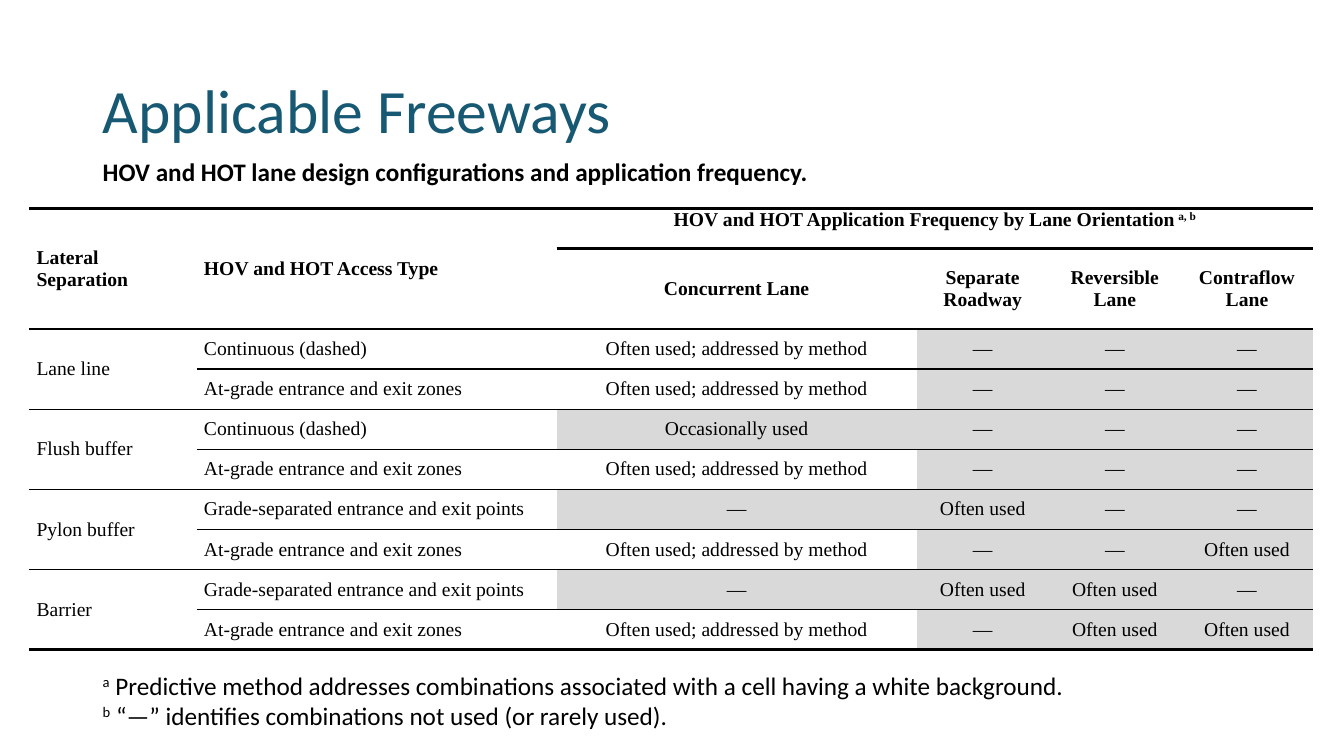
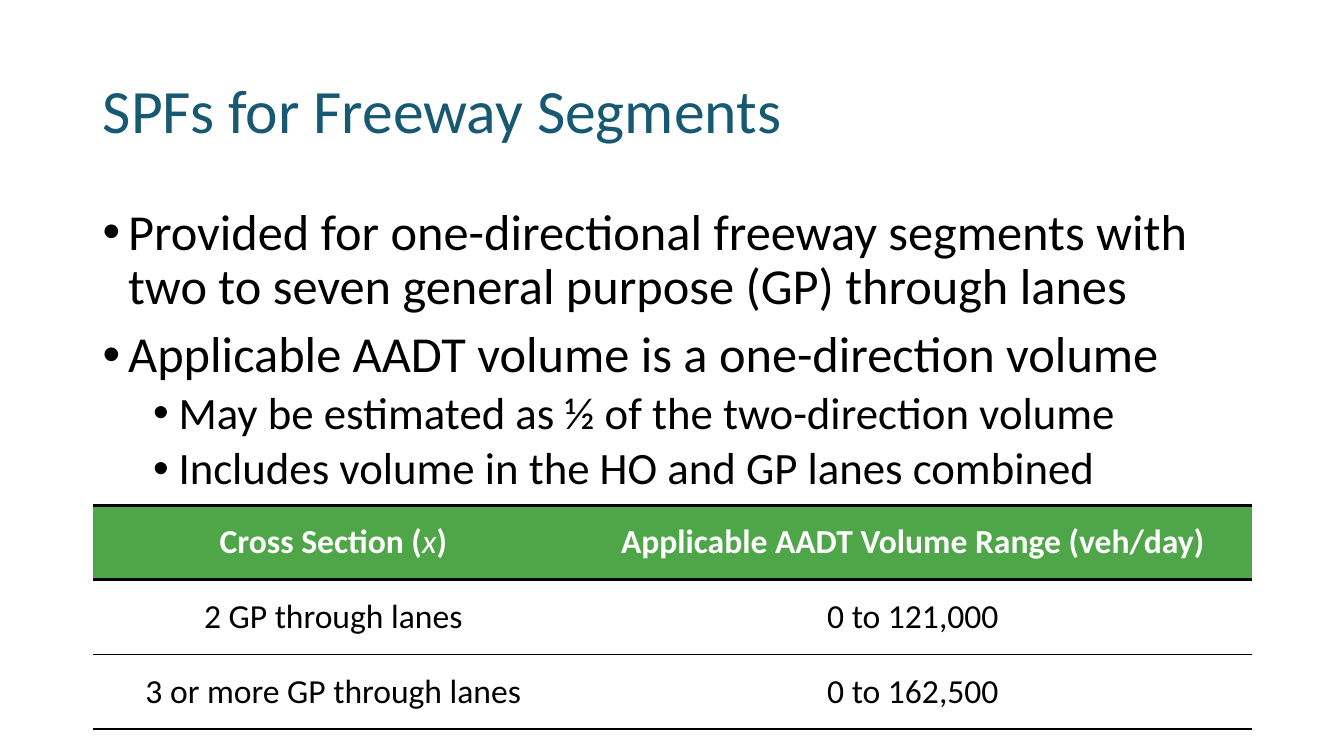
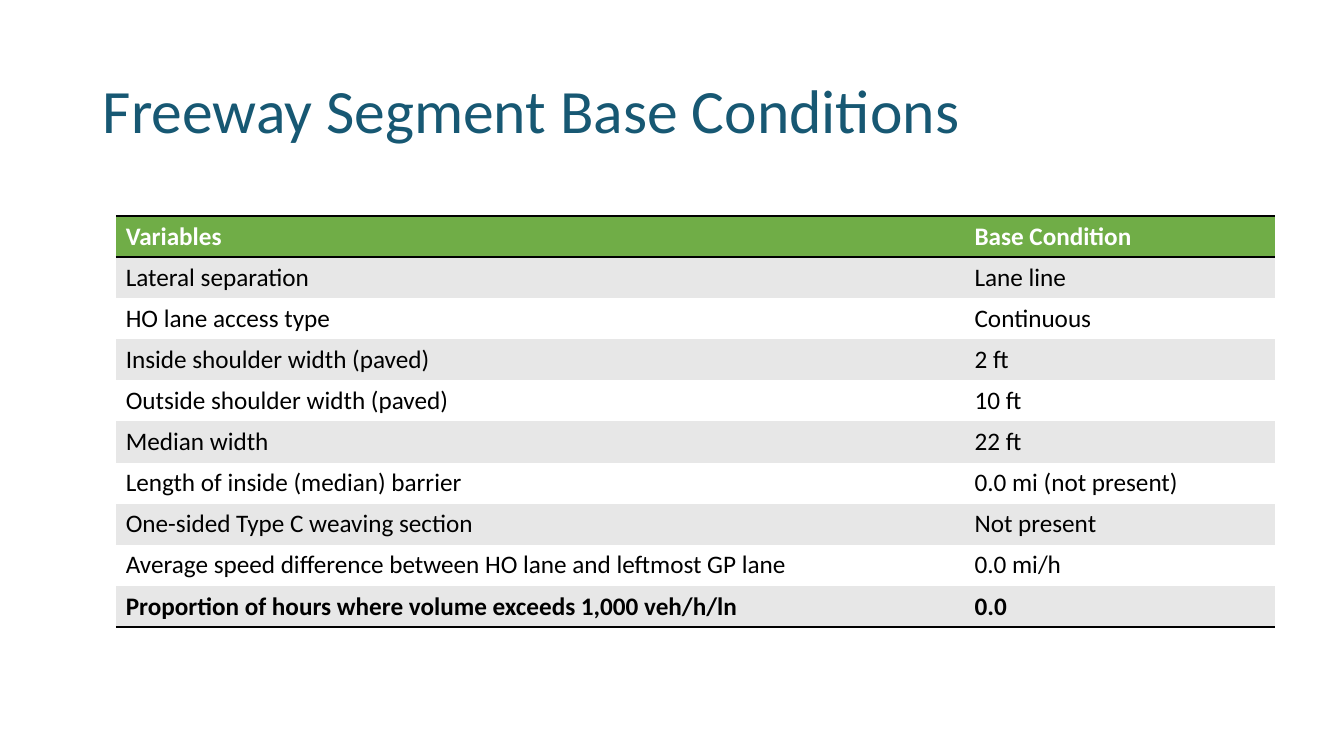
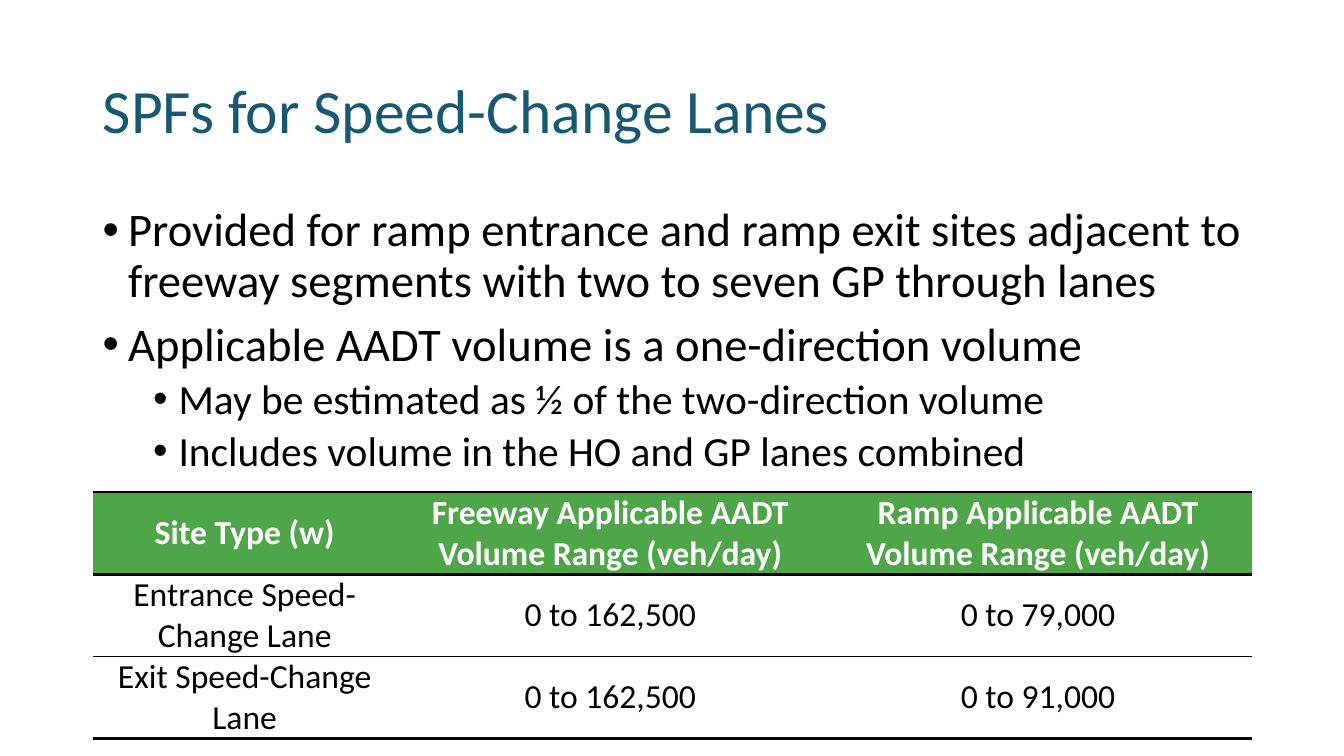
"""Build four slides on freeway safety prediction methods."""
from lxml import etree
from pptx import Presentation
from pptx import util as u
from pptx.dml.color import RGBColor
from pptx.enum import text as tx
from pptx.oxml.ns import qn

TEAL = RGBColor(0x17, 0x58, 0x73)
BLACK = RGBColor(0, 0, 0)
WHITE = RGBColor(0xFF, 0xFF, 0xFF)
GREEN = RGBColor(0x4E, 0xA6, 0x49)
LEAF = RGBColor(0x70, 0xAD, 0x47)
GREY = RGBColor(0xD9, 0xD9, 0xD9)
PALE = RGBColor(0xE7, 0xE7, 0xE7)
SANS, SERIF = "Calibri", "Times New Roman"
LEFT, WIDE = 2.34, 29.21
THICK, THIN = 2.25, 1
MID, TOP = tx.MSO_ANCHOR.MIDDLE, tx.MSO_ANCHOR.TOP
MIDDLE = tx.PP_ALIGN.CENTER
DASH = "—"
METHOD = "Often used; addressed by method"
OFTEN = "Often used"
ZONES = "At-grade entrance and exit zones"
POINTS = "Grade-separated entrance and exit points"


def write(par, text, size=18, color=BLACK, font=SANS, bold=False,
          align=tx.PP_ALIGN.LEFT, lead=None, before=None):
    """Fill a paragraph from a string or from (string, kind) parts."""
    par.alignment = align
    if lead:
        par.line_spacing = lead
    if before:
        par.space_before = u.Pt(before)
    parts = [(text, "")] if isinstance(text, str) else text
    for words, kind in parts:
        run = par.add_run()
        run.text = words
        face = run.font
        face.name, face.size = font, u.Pt(size)
        face.color.rgb = color
        face.bold = bold and kind != "italic"
        face.italic = kind == "italic"
        if kind == "super":
            run._r.get_or_add_rPr().set("baseline", "30000")


def start(deck, title):
    """Add a title-only slide with the shared title style."""
    slide = deck.slides.add_slide(deck.slide_layouts[5])
    head = slide.shapes.title
    head.left, head.top = u.Cm(LEFT), u.Cm(1.02)
    head.width, head.height = u.Cm(WIDE), u.Cm(3.68)
    frame = head.text_frame
    frame.auto_size = tx.MSO_AUTO_SIZE.NONE
    frame.vertical_anchor = MID
    write(frame.paragraphs[0], title, size=44, color=TEAL, lead=0.9)
    return slide


def block(slide, top, height, lines, width=WIDE, **style):
    """Add a wrapping text box and return its paragraphs."""
    box = slide.shapes.add_textbox(u.Cm(LEFT), u.Cm(top), u.Cm(width), u.Cm(height))
    frame = box.text_frame
    frame.word_wrap = True
    for n, line in enumerate(lines):
        par = frame.add_paragraph() if n else frame.paragraphs[0]
        write(par, line, **style)


def list_box(slide, items, sizes):
    """Add a bulleted list of (level, text) items."""
    box = slide.shapes.add_textbox(u.Cm(LEFT), u.Cm(5.08), u.Cm(WIDE), u.Cm(7.67))
    frame = box.text_frame
    frame.word_wrap = True
    for n, (level, line) in enumerate(items):
        par = frame.add_paragraph() if n else frame.paragraphs[0]
        par.level = level
        props = par._p.get_or_add_pPr()
        props.set("marL", str(u.Cm(0.64 + 1.27 * level)))
        props.set("indent", str(-u.Cm(0.64)))
        etree.SubElement(props, qn("a:buFont")).set("typeface", "Arial")
        etree.SubElement(props, qn("a:buChar")).set("char", "•")
        write(par, line, size=sizes[level], lead=0.9,
              before=(10, 5)[level] if n else None)


def edge(cell, top, bottom):
    """Rule a cell above and below and leave its sides open."""
    props = cell._tc.get_or_add_tcPr()
    for side, weight in (("L", 0), ("R", 0), ("T", top), ("B", bottom)):
        line = etree.SubElement(props, qn("a:ln" + side))
        line.set("w", str(u.Pt(weight)))
        if weight:
            fill = etree.SubElement(line, qn("a:solidFill"))
            etree.SubElement(fill, qn("a:srgbClr")).set("val", str(BLACK))
        else:
            etree.SubElement(line, qn("a:noFill"))


def grid(slide, left, top, cols, highs, rows, rules, look, inset, merges=()):
    """Add a table; look(row, col, text) gives fill, anchor and text style."""
    table = slide.shapes.add_table(
        len(rows), len(cols), u.Cm(left), u.Cm(top),
        u.Cm(sum(cols)), u.Cm(sum(highs))).table
    table.first_row = table.horz_banding = False
    for n, width in enumerate(cols):
        table.columns[n].width = u.Cm(width)
    for n, high in enumerate(highs):
        table.rows[n].height = u.Cm(high)
    for first, last in merges:
        table.cell(*first).merge(table.cell(*last))
    for r, row in enumerate(rows):
        for c, text in enumerate(row):
            cell = table.cell(r, c)
            span = cell.span_height if cell.is_merge_origin else 1
            edge(cell, rules[r], rules[r + span])
            fill, anchor, style = look(r, c, text)
            cell.fill.solid()
            cell.fill.fore_color.rgb = fill
            cell.vertical_anchor = anchor
            cell.margin_left = cell.margin_right = u.Cm(inset[0])
            cell.margin_top = cell.margin_bottom = u.Cm(inset[1])
            if text:
                write(cell.text_frame.paragraphs[0], text, **style)


def lane_look(r, c, text):
    """Style the lane table, greying cells outside the method."""
    grey = r > 1 and c > 1 and text != METHOD
    style = dict(size=14, font=SERIF, bold=r < 2)
    if c > 1:
        style["align"] = MIDDLE
    return GREY if grey else WHITE, TOP if (r, c) == (0, 2) else MID, style


def range_look(r, c, text):
    """Style a volume range table with a green header."""
    style = dict(size=24, align=MIDDLE, bold=r == 0, color=BLACK if r else WHITE)
    return WHITE if r else GREEN, MID, style


def base_look(r, c, text):
    """Style the banded base condition table."""
    fill = (WHITE, PALE)[r % 2] if r else LEAF
    return fill, TOP, dict(bold=r in (0, 9), color=BLACK if r else WHITE)


def ranges(slide, top, cols, high, rows):
    """Add a three-row volume range table."""
    grid(slide, LEFT, top, cols, [high] * 3, rows,
         [THICK, THICK, THIN, THICK], range_look, (0.1, 0))


def lanes(deck):
    """Build the lane configuration slide."""
    slide = start(deck, "Applicable Freeways")
    rows = [
        ["Lateral Separation", "HOV and HOT Access Type",
         [("HOV and HOT Application Frequency by Lane Orientation", ""),
          (" a, b", "super")], None, None, None],
        [None, None, "Concurrent Lane", "Separate Roadway",
         "Reversible Lane", "Contraflow Lane"],
        ["Lane line", "Continuous (dashed)", METHOD, DASH, DASH, DASH],
        [None, ZONES, METHOD, DASH, DASH, DASH],
        ["Flush buffer", "Continuous (dashed)", "Occasionally used", DASH, DASH, DASH],
        [None, ZONES, METHOD, DASH, DASH, DASH],
        ["Pylon buffer", POINTS, DASH, OFTEN, DASH, DASH],
        [None, ZONES, METHOD, DASH, DASH, OFTEN],
        ["Barrier", POINTS, DASH, OFTEN, OFTEN, DASH],
        [None, ZONES, METHOD, DASH, OFTEN, OFTEN],
    ]
    merges = [((r, 0), (r + 1, 0)) for r in range(0, 10, 2)]
    merges += [((0, 1), (1, 1)), ((0, 2), (0, 5))]
    grid(slide, 0.74, 5.26, [4.22, 9.07, 9.07] + [3.33] * 3,
         [1.01, 2.02] + [1.01] * 8, rows,
         [THICK] * 3 + [THIN] * 7 + [THICK], lane_look, (0.18, 0), merges)
    block(slide, 3.81, 1.8,
          ["HOV and HOT lane design configurations and application frequency."],
          bold=True)
    block(slide, 16.76, 2.2, [
        [("a", "super"), (" Predictive method addresses combinations associated "
                          "with a cell having a white background.", "")],
        [("b", "super"), (" “—” identifies combinations not used (or rarely used).", "")],
    ])


def bases(deck):
    """Build the base condition slide."""
    slide = start(deck, "Freeway Segment Base Conditions")
    rows = [
        ("Variables", "Base Condition"),
        ("Lateral separation", "Lane line"),
        ("HO lane access type", "Continuous"),
        ("Inside shoulder width (paved)", "2 ft"),
        ("Outside shoulder width (paved)", "10 ft"),
        ("Median width", "22 ft"),
        ("Length of inside (median) barrier", "0.0 mi (not present)"),
        ("One-sided Type C weaving section", "Not present"),
        ("Average speed difference between HO lane and leftmost GP lane", "0.0 mi/h"),
        ("Proportion of hours where volume exceeds 1,000 veh/h/ln", "0.0"),
    ]
    grid(slide, 2.92, 5.44, [21.39, 7.82], [1.03] * 10, rows,
         [2, 2] + [0] * 8 + [2], base_look, (0.25, 0.13))


def main():
    """Build and save the deck."""
    deck = Presentation()
    deck.slide_width, deck.slide_height = u.Cm(33.87), u.Cm(19.05)
    volume = [(0, "Applicable AADT volume is a one-direction volume"),
              (1, "May be estimated as ½ of the two-direction volume"),
              (1, "Includes volume in the HO and GP lanes combined")]
    lanes(deck)

    slide = start(deck, "SPFs for Freeway Segments")
    list_box(slide, [(0, "Provided for one-directional freeway segments with two "
                         "to seven general purpose (GP) through lanes")] + volume,
             (36, 32))
    ranges(slide, 12.73, [12.12, 17.09], 1.88, [
        ([("Cross Section (", ""), ("x", "italic"), (")", "")],
         "Applicable AADT Volume Range (veh/day)"),
        ("2 GP through lanes", "0 to 121,000"),
        ("3 or more GP through lanes", "0 to 162,500")])

    bases(deck)

    slide = start(deck, "SPFs for Speed-Change Lanes")
    ranges(slide, 12.4, [7.65, 10.78, 10.78], 2.07, [
        ("Site Type (w)", "Freeway Applicable AADT Volume Range (veh/day)",
         "Ramp Applicable AADT Volume Range (veh/day)"),
        ("Entrance Speed-Change Lane", "0 to 162,500", "0 to 79,000"),
        ("Exit Speed-Change Lane", "0 to 162,500", "0 to 91,000")])
    list_box(slide, [(0, "Provided for ramp entrance and ramp exit sites adjacent "
                         "to freeway segments with two to seven GP through lanes")]
             + volume, (33.3, 29.6))
    deck.save("out.pptx")


if __name__ == "__main__":
    main()
